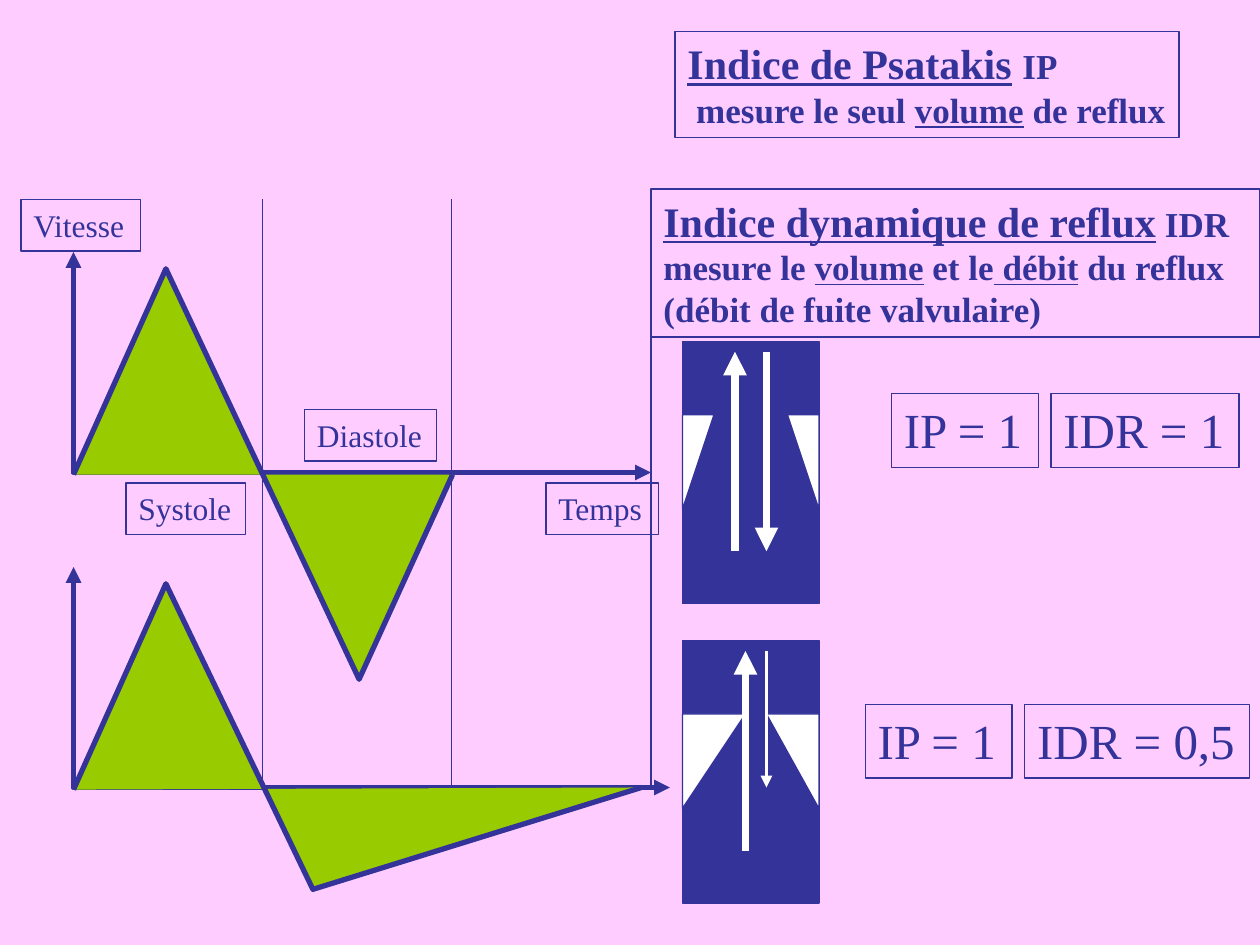
from lxml import etree
from pptx import Presentation
from pptx import util as u
from pptx.dml.color import RGBColor
from pptx.enum import shapes, text
from pptx.oxml import ns

INDIGO = RGBColor(0x33, 0x33, 0x99)
GREEN = RGBColor(0x99, 0xCC, 0x00)
WHITE = RGBColor(0xFF, 0xFF, 0xFF)
PINK = RGBColor(0xFF, 0xCC, 0xFF)
FONT = "Times New Roman"
COLUMNS, ROWS = 120, 90
WIDTH, HEIGHT = u.Inches(10), u.Inches(7.5)


def col(n):
    return round(WIDTH * n / COLUMNS)


def row(n):
    return round(HEIGHT * n / ROWS)


def apply(target, formats):
    for name, value in formats.items():
        setattr(target, name, value)


def paint(shape, fill, line, weight):
    shape.shadow.inherit = False
    if fill is None:
        shape.fill.background()
    else:
        shape.fill.solid()
        shape.fill.fore_color.rgb = fill
    shape.line.color.rgb = line
    shape.line.width = u.Pt(weight)


def add_arrowheads(shape, *ends):
    outline = shape.line._get_or_add_ln()
    for end in ends:
        etree.SubElement(outline, ns.qn(f"a:{end}"), type="triangle")


def add_label(slide, left, top, width, height, paragraphs, wrap=False):
    label = slide.shapes.add_textbox(col(left), row(top), col(width), row(height))
    label.fill.background()
    label.line.color.rgb = INDIGO
    label.line.width = u.Pt(0.75)
    frame = label.text_frame
    apply(frame, {"word_wrap": wrap, "auto_size": text.MSO_AUTO_SIZE.SHAPE_TO_FIT_TEXT})
    for index, runs in enumerate(paragraphs):
        paragraph = frame.add_paragraph() if index else frame.paragraphs[0]
        for words, size, *emphasis in runs:
            run = paragraph.add_run()
            run.text = words
            run.font.color.rgb = INDIGO
            apply(run.font, {"name": FONT, "size": u.Pt(size),
                             "bold": "b" in emphasis, "underline": "u" in emphasis})


def add_path(slide, points, fill=None):
    places = [(col(x), row(y)) for x, y in points]
    builder = slide.shapes.build_freeform(*places[0], scale=1.0)
    builder.add_line_segments(places[1:], close=False)
    path = builder.convert_to_shape()
    paint(path, fill, INDIGO, 3)
    return path


def add_line(slide, start, end, color, weight, arrow=False):
    line = slide.shapes.add_connector(
        shapes.MSO_CONNECTOR.STRAIGHT, col(start[0]), row(start[1]), col(end[0]), row(end[1]))
    line.line.color.rgb = color
    line.line.width = u.Pt(weight)
    if arrow:
        add_arrowheads(line, "tailEnd")
    etree.SubElement(line._element.spPr, ns.qn("a:effectLst"))


def add_block(slide, kind, left, top, width, height, fill, flips=()):
    block = slide.shapes.add_shape(kind, col(left), row(top), col(width), row(height))
    paint(block, fill, INDIGO, 0.75)
    for flip in flips:
        block._element.spPr.xfrm.set(flip, "1")


def add_graph(slide, baseline, axis_end, flow):
    axes = add_path(slide, [(7, baseline - 21), (7, baseline), (axis_end, baseline)])
    add_arrowheads(axes, "headEnd", "tailEnd")
    add_path(slide, [(x, baseline + y) for x, y in flow], GREEN)


def add_valve(slide, top, left_leaf, right_leaf, up_x, reflux_length, reflux_weight):
    left, width = 65, 13
    shape = shapes.MSO_SHAPE
    add_block(slide, shape.RECTANGLE, left, top, width, 25, INDIGO)
    add_block(slide, shape.RIGHT_TRIANGLE, left, top + 7, left_leaf, 9, WHITE, ["flipV"])
    add_block(slide, shape.RIGHT_TRIANGLE, left + width - right_leaf, top + 7,
              right_leaf, 9, WHITE, ["flipH", "flipV"])
    add_line(slide, (up_x, top + 20), (up_x, top + 1), WHITE, 4.5, True)
    add_line(slide, (73, top + 1), (73, top + 1 + reflux_length), WHITE, reflux_weight, True)


def add_headings(slide):
    add_label(slide, 64.3, 3, 48, 10.1, [
        [("Indice de Psatakis", 24, "b", "u"), (" ", 24, "b"), ("IP", 20, "b")],
        [(" mesure le seul ", 20, "b"), ("volume", 20, "b", "u"), (" de reflux", 20, "b")],
    ])
    add_label(slide, 62, 18, 58, 14.1, [
        [("Indice dynamique de reflux", 24, "b", "u"), (" IDR", 20, "b")],
        [("mesure le ", 20, "b"), ("volume", 20, "b", "u"), (" et le", 20, "b"),
         (" débit", 20, "b", "u"), (" du reflux (débit de fuite valvulaire)", 20, "b")],
    ], wrap=True)


def main():
    deck = Presentation()
    apply(deck, {"slide_width": WIDTH, "slide_height": HEIGHT})
    slide = deck.slides.add_slide(deck.slide_layouts[6])
    slide.background.fill.solid()
    slide.background.fill.fore_color.rgb = PINK

    systole = [(7, 0.2), (15.8, -19.4)]
    add_graph(slide, 45, 62, systole + [(34.2, 19.7), (43.1, 0.2)])
    add_graph(slide, 75, 63.8, systole + [(29.8, 9.7), (61.1, 0)])

    for name, left, top, width in [("Systole", 12, 46, 11.4), ("Diastole", 29, 39, 12.6),
                                   ("Vitesse", 2, 19, 11.4), ("Temps", 52, 46, 10.7)]:
        add_label(slide, left, top, width, 4.9, [[(name, 18)]])
    for phase_end in (25, 43, 62):
        add_line(slide, (phase_end, 19), (phase_end, 75), INDIGO, 0.75)

    add_headings(slide)
    for score, left, top, width in [("IP = 1", 84.9, 37.5, 14), ("IDR = 1", 100.1, 37.5, 17.9),
                                    ("IP = 1", 82.4, 67.1, 14), ("IDR = 0,5", 97.6, 67.1, 21.4)]:
        add_label(slide, left, top, width, 7, [[(score, 28)]])

    add_valve(slide, 32.5, 3, 3, 70, 19, 4.5)
    add_valve(slide, 61, 6, 5, 71, 13, 2.25)
    deck.save("out.pptx")


if __name__ == "__main__":
    main()
